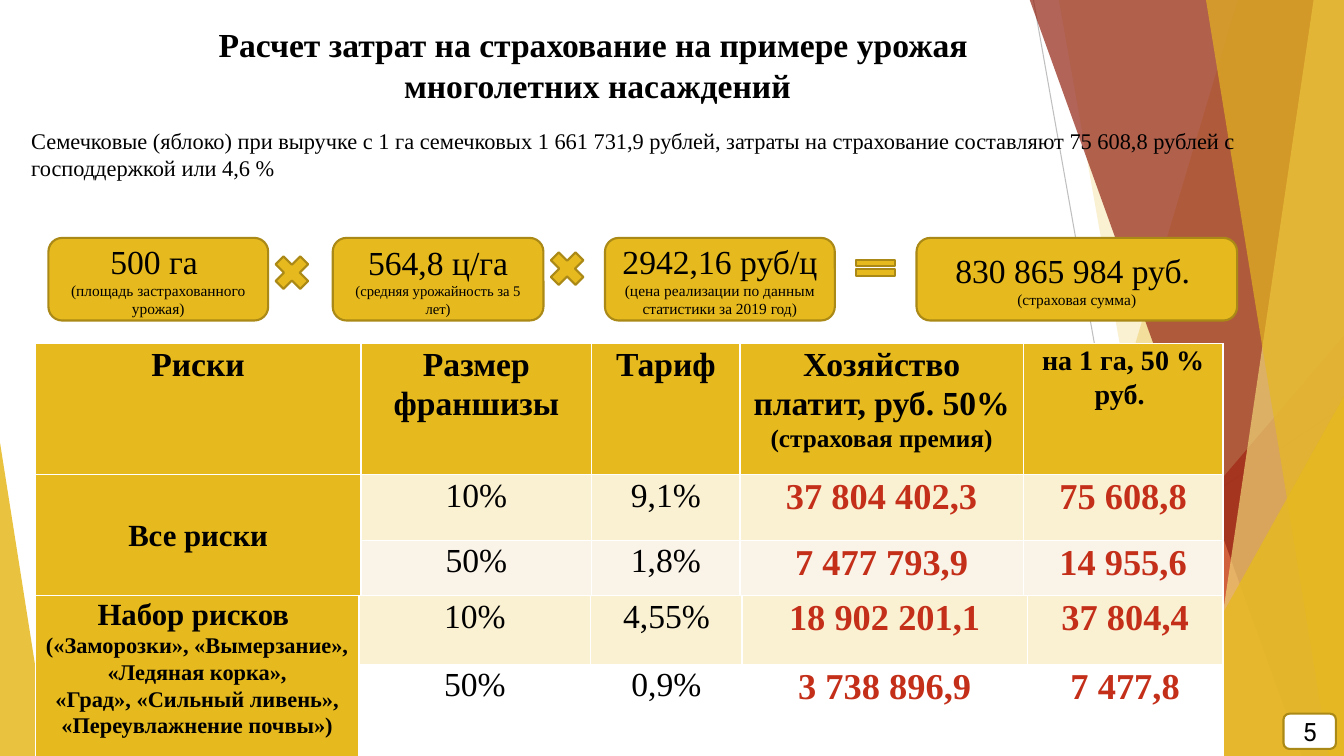
"""Builds the slide on the cost of insuring a perennial fruit harvest."""
from lxml.etree import SubElement
from pptx import Presentation
from pptx.dml.color import RGBColor
from pptx.enum.shapes import MSO_CONNECTOR, MSO_SHAPE
from pptx.enum.text import MSO_ANCHOR, PP_ALIGN
from pptx.oxml.ns import qn
from pptx.util import Inches, Pt

GOLD, DARK_GOLD, CREAM, PALE = "E6B91E", "AA8916", "FAF1D2", "FAF3E8"
RED, BLACK, WHITE = "C42F1A", "000000", "FFFFFF"


def paint(shape, fill, line=None, opacity=100):
    shape.shadow.inherit = False
    shape.fill.solid()
    shape.fill.fore_color.rgb = RGBColor.from_string(fill)
    if opacity < 100:
        tint = shape.fill._xPr.find(qn("a:solidFill"))[0]
        SubElement(tint, qn("a:alpha"), val=str(opacity * 1000))
    if line:
        shape.line.color.rgb = RGBColor.from_string(line)
        shape.line.width = Pt(1.5)
    else:
        shape.line.fill.background()


def write(frame, paragraphs, color=BLACK, bold=False, font="Times New Roman",
          align=PP_ALIGN.CENTER, spacing=None, anchor=MSO_ANCHOR.TOP):
    frame.word_wrap = True
    frame.vertical_anchor = anchor
    for index, spans in enumerate(paragraphs):
        para = frame.add_paragraph() if index else frame.paragraphs[0]
        for name, value in {"alignment": align, "line_spacing": spacing}.items():
            setattr(para, name, value)
        for text, size in spans:
            span = para.add_run()
            span.text = text
            for name, value in {"name": font, "size": Pt(size), "bold": bold}.items():
                setattr(span.font, name, value)
            span.font.color.rgb = RGBColor.from_string(color)


deck = Presentation()
deck.slide_width, deck.slide_height = Inches(13.33), Inches(7.5)
page = deck.slides.add_slide(deck.slide_layouts[5])
shapes = page.shapes

for start, end, color in [((10.25, 0), (11.58, 7.5), "BFBFBF"),
                          ((13.33, 4.03), (8.12, 7.5), "D9D9D9")]:
    ray = shapes.add_connector(MSO_CONNECTOR.STRAIGHT, *map(Inches, start + end))
    ray.line.color.rgb = RGBColor.from_string(color)
    ray.line.width = Pt(0.75)
    SubElement(ray._element.spPr, qn("a:effectLst"))

# A band gives its left edge at top and bottom, a triangle its box and apex
backdrop = [
    ("band", (12.28, 10.04), GOLD, 30),
    ("band", (10.5, 11.83), GOLD, 20),
    ("triangle", (9.77, 3.33, 3.56, 4.17, 1), RED, 72),
    ("band", (10.21, 12.91), "932313", 70),
    ("band", (13.03, 11.92), "F0D578", 70),
    ("band", (11.96, 13.18), GOLD, 65),
    ("triangle", (11.34, 3.93, 1.99, 3.57, 1), GOLD, 80),
    ("triangle", (0, 4.39, 0.49, 3.11, 0), GOLD, 85),
]
for kind, values, color, opacity in backdrop:
    if kind == "band":
        top, bottom = values
        outline = shapes.build_freeform(Inches(top), Inches(-0.01))
        corners = [(13.33, -0.01), (13.33, 7.5), (bottom, 7.5)]
        outline.add_line_segments([(Inches(x), Inches(y)) for x, y in corners])
        facet = outline.convert_to_shape()
    else:
        *place, apex = values
        facet = shapes.add_shape(MSO_SHAPE.ISOSCELES_TRIANGLE, *map(Inches, place))
        facet.adjustments[0] = apex
    paint(facet, color, opacity=opacity)

summary = shapes.title
shapes._spTree.append(summary._element)
for name, value in {"left": 0.21, "top": 1.18, "width": 12.23, "height": 0.69}.items():
    setattr(summary, name, Inches(value))
write(summary.text_frame, [[(
    "Семечковые (яблоко) при выручке с 1 га семечковых 1 661 731,9 рублей, затраты на "
    "страхование составляют 75 608,8 рублей с господдержкой или 4,6 %", 16)]],
    align=PP_ALIGN.LEFT, anchor=MSO_ANCHOR.MIDDLE)

heading = shapes.add_textbox(*map(Inches, (0, 0.19, 11.85, 0.55)))
write(heading.text_frame, [[("Расчет затрат на страхование на примере урожая ", 24)],
                           [("многолетних насаждений", 24)]], bold=True)

factors = [
    (0.48, 2.18, [[("500 га ", 24)], [("(площадь застрахованного урожая)", 11)]]),
    (3.3, 2.09, [[("564,8 ц/га ", 24), ("(средняя урожайность за 5 лет)", 10.5)]]),
    (6, 2.28, [[("2942,16 руб/ц ", 24),
                ("(цена реализации по данным статистики за 2019 год)", 11)]]),
    (9.09, 3.18, [[("830 865 984 руб. ", 24)], [("(страховая сумма)", 11)]]),
]
for left, width, paragraphs in factors:
    box = shapes.add_shape(MSO_SHAPE.ROUNDED_RECTANGLE,
                           *map(Inches, (left, 2.36, width, 0.82)))
    paint(box, GOLD, DARK_GOLD)
    write(box.text_frame, paragraphs, anchor=MSO_ANCHOR.MIDDLE)

for sign, place in [(MSO_SHAPE.MATH_MULTIPLY, (2.66, 2.47, 0.47, 0.47)),
                    (MSO_SHAPE.MATH_MULTIPLY, (5.39, 2.43, 0.47, 0.47)),
                    (MSO_SHAPE.MATH_EQUAL, (8.42, 2.52, 0.53, 0.27))]:
    paint(shapes.add_shape(sign, *map(Inches, place)), GOLD, DARK_GOLD)

badge = shapes.add_shape(MSO_SHAPE.ROUNDED_RECTANGLE,
                         *map(Inches, (12.73, 7.08, 0.52, 0.35)))
paint(badge, WHITE, DARK_GOLD)
write(badge.text_frame, [[("5", 18)]], font="Roboto", anchor=MSO_ANCHOR.MIDDLE)

header = [
    [[("Риски", 24)]],
    [[("Размер франшизы", 24)]],
    [[("Тариф", 24)]],
    [[("Хозяйство платит, руб. 50% ", 24), ("(страховая премия)", 18)]],
    [[("на 1 га, 50 %", 20)], [("руб. ", 20)]],
]
all_risks = [[("Все риски", 22)]]
risk_set = [
    [("Набор рисков ", 22)],
    [("(«Заморозки», «Вымерзание», «Ледяная корка»,", 16)],
    [("«Град», «Сильный ливень», «Переувлажнение почвы»)", 16)],
]
tables = [
    (3.41, [3.23, 2.29, 1.47, 2.81, 1.98], [1.3, 0.65, 0.55], header, all_risks,
     [(CREAM, ["10%", "9,1%", "37 804 402,3", "75 608,8"]),
      (PALE, ["50%", "1,8%", "7 477 793,9", "14 955,6"])]),
    (5.91, [3.21, 2.3, 1.5, 2.83, 1.94], [0.68, 0.68], None, risk_set,
     [(CREAM, ["10%", "4,55%", "18 902 201,1", "37 804,4"]),
      (WHITE, ["50%", "0,9%", "3 738 896,9", "7 477,8"])]),
]
for top, widths, heights, titles, risk, rates in tables:
    place = map(Inches, (0.35, top, sum(widths), sum(heights)))
    table = shapes.add_table(len(heights), len(widths), *place).table
    for column, width in zip(table.columns, widths):
        column.width = Inches(width)
    for row, height in zip(table.rows, heights):
        row.height = Inches(height)
    first = len(heights) - len(rates)
    table.cell(first, 0).merge(table.cell(first + 1, 0))
    entries = [(0, i, GOLD, text, BLACK, True) for i, text in enumerate(titles or [])]
    entries.append((first, 0, GOLD, risk, BLACK, True))
    for row, (fill, values) in enumerate(rates, first):
        for column, value in enumerate(values, 1):
            money = column > 2
            entries.append((row, column, fill, [[(value, 26 if money else 24)]],
                            RED if money else BLACK, money))
    for row, column, fill, paragraphs, color, bold in entries:
        cell = table.cell(row, column)
        cell.fill.solid()
        cell.fill.fore_color.rgb = RGBColor.from_string(fill)
        margins = {"margin_left": 0.07, "margin_right": 0.07,
                   "margin_top": 0, "margin_bottom": 0}
        for name, value in margins.items():
            setattr(cell, name, Inches(value))
        write(cell.text_frame, paragraphs, color, bold, spacing=1.07)
        cell.vertical_anchor = MSO_ANCHOR.MIDDLE if paragraphs is all_risks else MSO_ANCHOR.TOP

deck.save("out.pptx")
